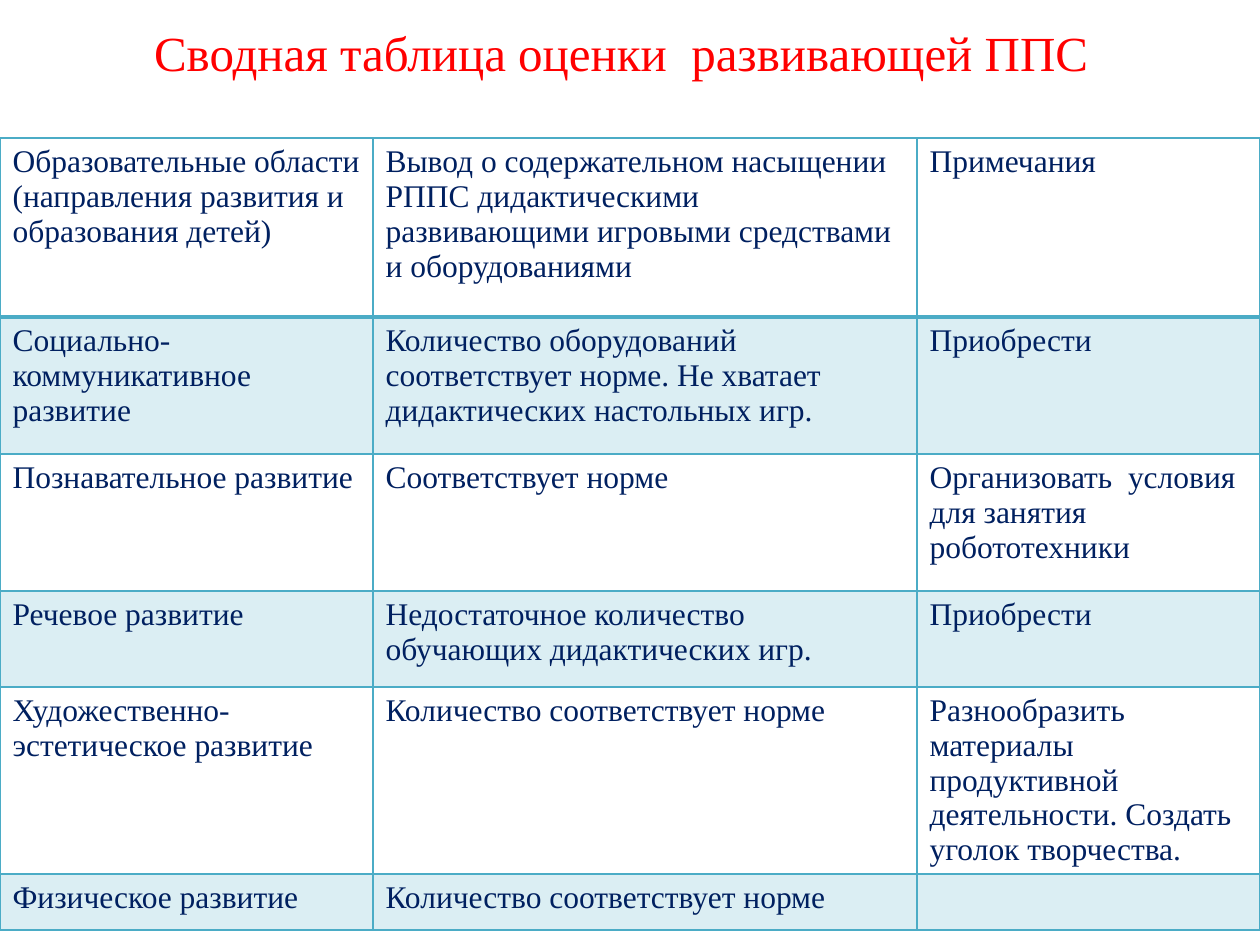
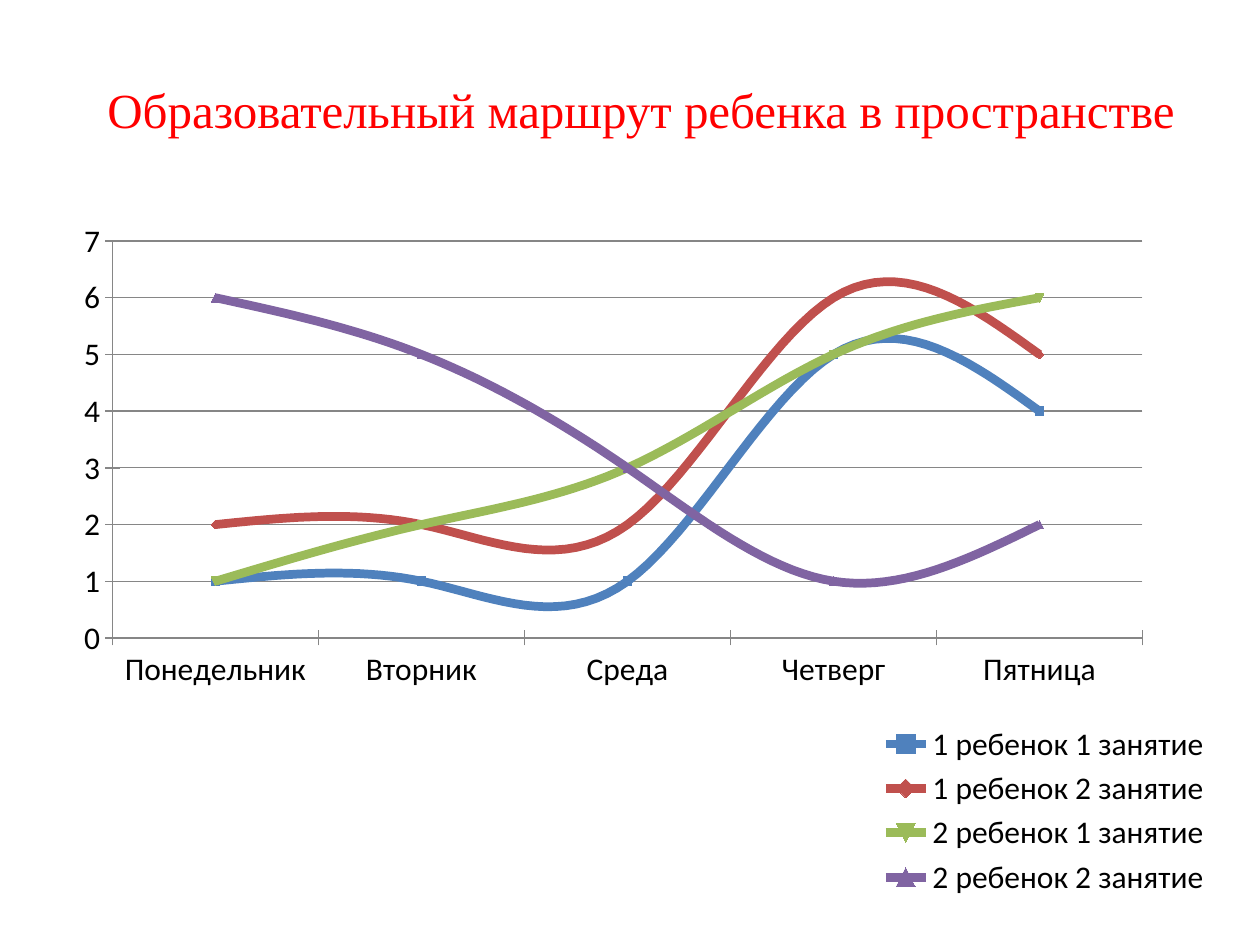
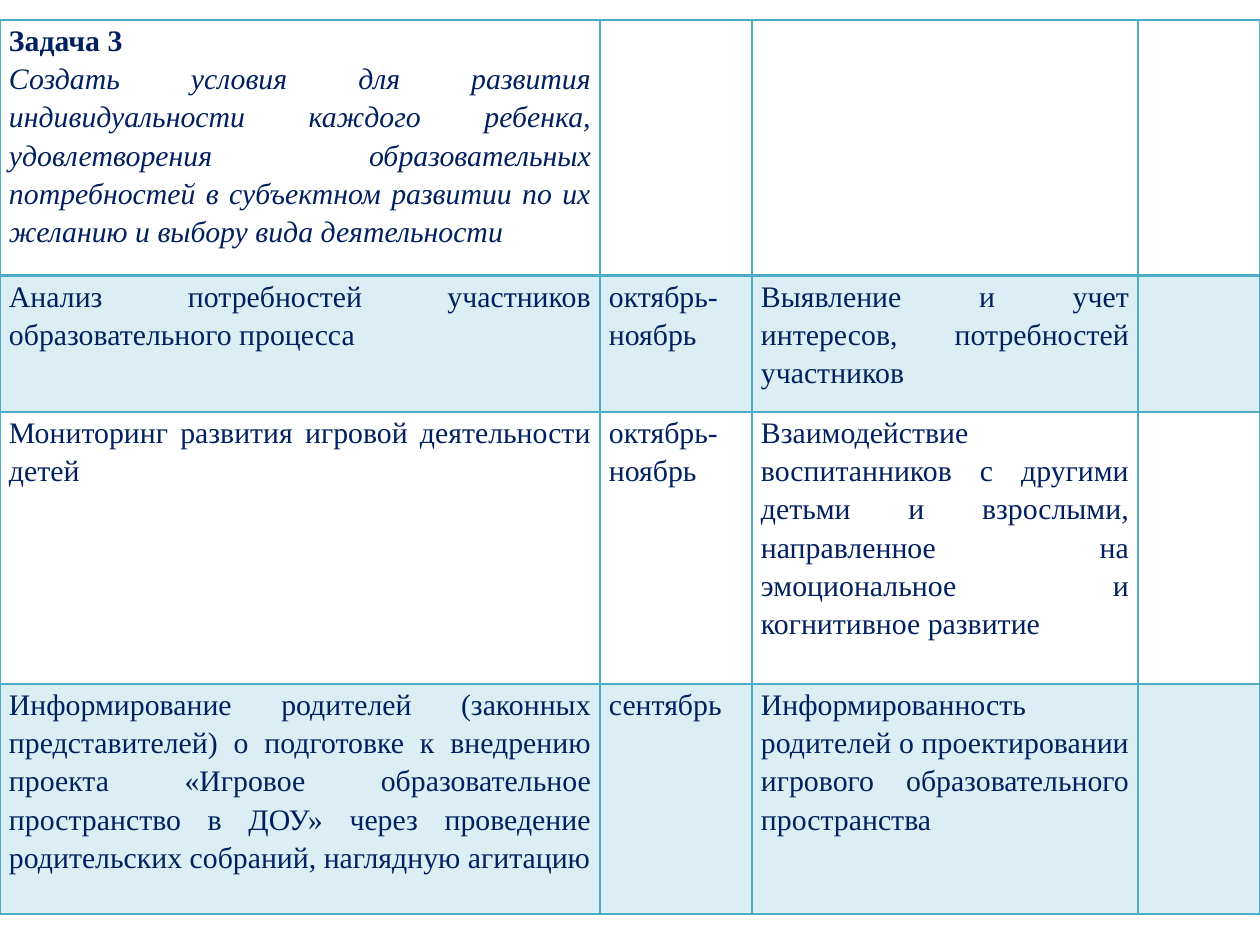
from lxml import etree
from pptx import Presentation
from pptx.chart.data import CategoryChartData
from pptx.dml.color import RGBColor
from pptx.enum.chart import XL_CHART_TYPE, XL_LEGEND_POSITION, XL_TICK_MARK
from pptx.enum.text import MSO_ANCHOR, MSO_AUTO_SIZE, PP_ALIGN
from pptx.oxml.ns import qn
from pptx.util import Emu, Pt

LINE_MARKERS = XL_CHART_TYPE.LINE_MARKERS
LEGEND_RIGHT = XL_LEGEND_POSITION.RIGHT
TICK_CROSS = XL_TICK_MARK.CROSS
MIDDLE = MSO_ANCHOR.MIDDLE
NO_AUTOFIT = MSO_AUTO_SIZE.NONE
CENTER, JUSTIFY = PP_ALIGN.CENTER, PP_ALIGN.JUSTIFY

PX_PER_INCH = 126
SLIDE_SIZE = (1260, 945)
TITLE_ONLY, BLANK = 5, 6
SERIF, SANS = "Times New Roman", "Calibri"
COLORS = {
    "title": "FF0000", "text": "002060", "accent": "4BACC6",
    "chart_text": "000000", "axis": "868686",
    "blue": "4F81BD", "red": "C0504D", "green": "9BBB59", "purple": "8064A2",
}

# Content
ASSESSMENT = [
    ["Образовательные области (направления развития и образования детей)",
     "Вывод о содержательном насыщении РППС дидактическими развивающими "
     "игровыми средствами и оборудованиями",
     "Примечания"],
    ["Социально-коммуникативное развитие",
     "Количество оборудований соответствует норме. Не хватает дидактических "
     "настольных игр.",
     "Приобрести"],
    ["Познавательное развитие", "Соответствует норме",
     "Организовать  условия для занятия робототехники"],
    ["Речевое развитие", "Недостаточное количество обучающих дидактических игр.",
     "Приобрести"],
    ["Художественно-эстетическое развитие", "Количество соответствует норме",
     "Разнообразить материалы продуктивной деятельности. Создать уголок "
     "творчества."],
    ["Физическое развитие", "Количество соответствует норме", ""],
]
WEEKDAYS = ["Понедельник", "Вторник", "Среда", "Четверг", "Пятница"]
ROUTES = [
    ("1 ребенок 1 занятие", (1, 1, 1, 5, 4), "blue"),
    ("1 ребенок 2 занятие", (2, 2, 2, 6, 5), "red"),
    ("2 ребенок 1 занятие", (1, 2, 3, 5, 6), "green"),
    ("2 ребенок 2 занятие", (6, 5, 3, 1, 2), "purple"),
]
TASK_PLAN = [
    ["Задача 3\nСоздать условия для развития индивидуальности каждого ребенка, "
     "удовлетворения образовательных потребностей в субъектном развитии по их "
     "желанию и выбору вида деятельности", "", "", ""],
    ["Анализ потребностей участников образовательного процесса",
     "октябрь-ноябрь",
     "Выявление и учет интересов, потребностей участников", ""],
    ["Мониторинг развития игровой деятельности детей", "октябрь-ноябрь",
     "Взаимодействие воспитанников с другими детьми и взрослыми, направленное "
     "на эмоциональное и когнитивное развитие", ""],
    ["Информирование родителей (законных представителей) о подготовке к "
     "внедрению проекта «Игровое образовательное пространство в ДОУ» через "
     "проведение родительских собраний, наглядную агитацию",
     "сентябрь",
     "Информированность родителей о проектировании игрового образовательного "
     "пространства", ""],
]


def px(length):
    return Emu(round(length * 914400 / PX_PER_INCH))


def rgb(name):
    return RGBColor.from_string(COLORS[name])


def assign(target, values):
    for key, value in values.items():
        setattr(target, key, value)


class Deck:
    def __init__(self):
        self.prs = Presentation()
        self.prs.slide_width, self.prs.slide_height = map(px, SLIDE_SIZE)
        self.slide = None

    def new_slide(self, layout):
        self.slide = self.prs.slides.add_slide(self.prs.slide_layouts[layout])

    def style_font(self, font, size, color, name=SERIF):
        assign(font, {"size": Pt(size), "name": name})
        font.color.rgb = rgb(color)

    def title(self, text, box, margin_bottom=6):
        title = self.slide.shapes.title
        assign(title, dict(zip(("left", "top", "width", "height"), map(px, box))))
        title.text_frame.text = text
        assign(title.text_frame, {
            "word_wrap": True, "auto_size": NO_AUTOFIT,
            "vertical_anchor": MIDDLE, "margin_bottom": px(margin_bottom)})
        paragraph = title.text_frame.paragraphs[0]
        paragraph.alignment = CENTER
        self.style_font(paragraph.runs[0].font, 28, "title")

    def table(self, content, top, widths, heights, size, margins=None,
              paragraph_format=None, space_after=0):
        frame = self.slide.shapes.add_table(
            len(heights), len(widths), 0, px(top), px(sum(widths)), px(sum(heights)))
        table = frame.table
        assign(table, {"first_row": False, "horz_banding": False})
        for column, width in zip(table.columns, widths):
            column.width = px(width)
        for row, height in zip(table.rows, heights):
            row.height = px(height)

        cell_elements = frame.element.iter(qn("a:tc"))
        for index, (cell, element) in enumerate(zip(table.iter_cells(), cell_elements)):
            row, column = divmod(index, len(widths))
            if content[row][column]:
                cell.text = content[row][column]
                assign(cell, margins or {})
            for paragraph in cell.text_frame.paragraphs:
                assign(paragraph, paragraph_format or {})
                if row and space_after:
                    paragraph.space_after = Pt(space_after)
                for run in paragraph.runs:
                    self.style_font(run.font, size, "text")
            self.cell_fill(cell, element, banded=row % 2 == 1)
            self.cell_borders(element, row)
        return table

    def cell_fill(self, cell, element, banded):
        if not banded:
            cell.fill.background()
            return
        cell.fill.solid()
        cell.fill.fore_color.rgb = rgb("accent")
        color = element.find(qn("a:tcPr")).find(".//" + qn("a:srgbClr"))
        etree.SubElement(color, qn("a:alpha"), val="20000")

    def cell_borders(self, element, row):
        thick_side = {0: "B", 1: "T"}.get(row)
        properties = element.find(qn("a:tcPr"))
        for position, side in enumerate("LRTB"):
            width = Pt(2 if side == thick_side else 1)
            line = etree.Element(qn("a:ln" + side), w=str(width))
            fill = etree.SubElement(line, qn("a:solidFill"))
            etree.SubElement(fill, qn("a:srgbClr"), val=COLORS["accent"])
            properties.insert(position, line)

    def chart_layout(self, parent, position, bounds, inner=False):
        for old in parent.findall(qn("c:layout")):
            parent.remove(old)
        layout = etree.Element(qn("c:layout"))
        manual = etree.SubElement(layout, qn("c:manualLayout"))
        values = {"layoutTarget": "inner"} if inner else {}
        values.update(xMode="edge", yMode="edge")
        values.update(zip("xywh", bounds))
        for key, value in values.items():
            etree.SubElement(manual, qn("c:" + key), val=str(value))
        parent.insert(position, layout)

    def line_chart(self, box, categories, series, plot_bounds, legend_bounds):
        data = CategoryChartData(number_format="General")
        data.categories = categories
        for name, values, _ in series:
            data.add_series(name, values)
        chart = self.slide.shapes.add_chart(LINE_MARKERS, *map(px, box), data).chart
        assign(chart, {"has_title": False, "has_legend": True})
        self.style_font(chart.font, 18, "chart_text", SANS)
        chart.plots[0].vary_by_categories = False
        assign(chart.legend, {"position": LEGEND_RIGHT, "include_in_layout": False})

        # Axes and grid
        assign(chart.value_axis, {"minimum_scale": 0, "maximum_scale": 7,
                                  "major_unit": 1, "has_major_gridlines": True})
        for axis in (chart.category_axis, chart.value_axis):
            axis.major_tick_mark = TICK_CROSS
            axis.format.line.color.rgb = rgb("axis")
        chart.value_axis.major_gridlines.format.line.color.rgb = rgb("axis")

        # Curves
        for curve, (_, _, color) in zip(chart.plots[0].series, series):
            curve.smooth = True
            curve.format.line.width = Pt(5)
            curve.format.line.color.rgb = rgb(color)

        root = chart.element
        self.chart_layout(root.find(".//" + qn("c:plotArea")), 0, plot_bounds, True)
        self.chart_layout(root.find(".//" + qn("c:legend")), 1, legend_bounds)


def main():
    deck = Deck()

    # Summary of the assessment
    deck.new_slide(TITLE_ONLY)
    deck.title("Сводная таблица оценки  развивающей ППС", (54, 29, 1134, 96),
               margin_bottom=56)
    deck.table(ASSESSMENT, 138, (373, 544, 343), (179, 137, 137, 96, 187, 56), 18)

    # Weekly route of each child
    deck.new_slide(TITLE_ONLY)
    deck.line_chart((-44, 175, 1304, 735), WEEKDAYS, ROUTES,
                    (0.12, 0.09, 0.79, 0.54), (0.7, 0.74, 0.27, 0.25))
    deck.title("Образовательный маршрут ребенка в пространстве", (74, 49, 1134, 119))

    # Plan for the third task
    deck.new_slide(BLANK)
    plan = deck.table(
        TASK_PLAN, 20, (600, 152, 386, 122), (256, 136, 272, 230), 17,
        margins={"margin_left": px(9), "margin_right": px(9),
                 "margin_top": 0, "margin_bottom": 0},
        paragraph_format={"alignment": JUSTIFY, "line_spacing": 1.15},
        space_after=10)
    heading, goal = plan.cell(0, 0).text_frame.paragraphs
    heading.runs[0].font.bold = True
    goal.runs[0].font.italic = True

    deck.prs.save("out.pptx")


if __name__ == "__main__":
    main()
